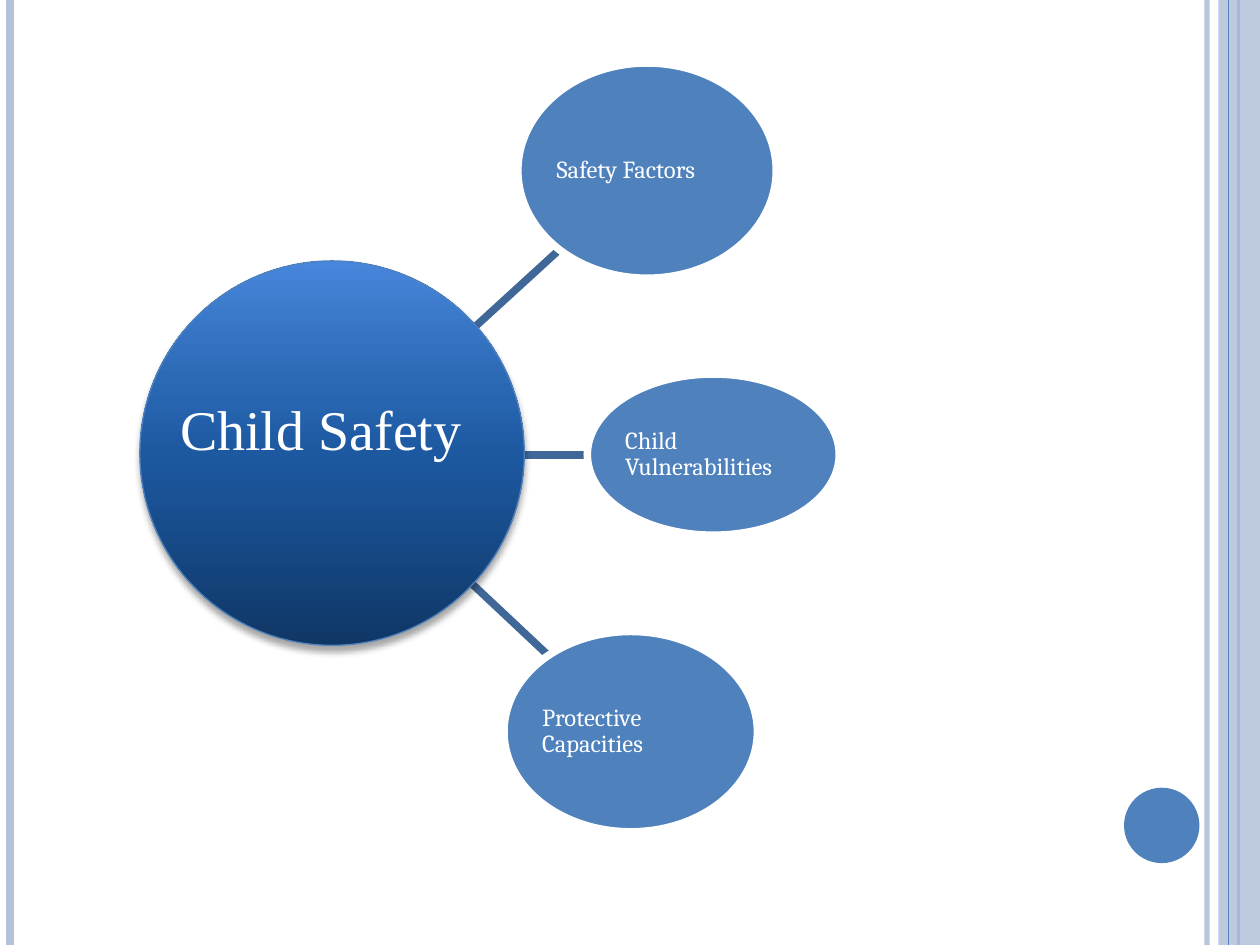
from lxml import etree
from pptx import Presentation
from pptx.dml.color import RGBColor
from pptx.enum.shapes import MSO_CONNECTOR, MSO_SHAPE
from pptx.enum.text import MSO_ANCHOR, PP_ALIGN
from pptx.oxml.ns import qn
from pptx.util import Cm, Pt

STRAIGHT = MSO_CONNECTOR.STRAIGHT
OVAL = MSO_SHAPE.OVAL
RECTANGLE = MSO_SHAPE.RECTANGLE
MIDDLE = MSO_ANCHOR.MIDDLE
LEFT = PP_ALIGN.LEFT

COLORS = {
    "blue": "4F81BD",
    "pale": "B3C1DB",
    "spoke": "3F6797",
    "white": "FFFFFF",
    "black": "000000",
}
HUB_STOPS = [(0, "0F3766"), (50, "1D59A1"), (70, "2D6AB6"), (100, "4786DB")]
WIDTH, HEIGHT = 25.4, 19.05

STRIPES_BELOW = [(24.33, "pale", 3, 93), (0.2, "pale", 4.5, 100), (24.97, "blue", 1.5, 100)]
BAND = (24.56, 0, 0.84, HEIGHT)
STRIPE_ABOVE = (24.77, "blue", 0.75, 100)
BADGE = (22.66, 15.88, 1.52, 1.52)

SPOKES = [
    (9.42, 11.68, 11.05, 13.21),
    (9.42, 9.17, 11.84, 9.17),
    (9.42, 6.73, 11.28, 5.03),
]
HUB = (2.82, 5.26, 7.75, 7.75)
HUB_LABEL = (3.38, 7.82, 6.25, 1.63)
FACTORS = [
    ("Safety Factors", (10.44, 1.27, 5.21, 4.34)),
    ("Child Vulnerabilities", (11.84, 7.54, 5.08, 3.25)),
    ("Protective Capacities", (10.16, 12.73, 5.11, 4.04)),
]


def rgb(name):
    return RGBColor.from_string(COLORS[name])


def set_alpha(parent, percent):
    for color in parent.iter(qn("a:srgbClr")):
        etree.SubElement(color, qn("a:alpha"), val=str(percent * 1000))


def add_line(page, ends, color, width, alpha=100):
    line = page.shapes.add_connector(STRAIGHT, *map(Cm, ends))
    line.line.color.rgb = rgb(color)
    line.line.width = Pt(width)
    properties = line._element.spPr
    if alpha < 100:
        set_alpha(properties, alpha)
    etree.SubElement(properties, qn("a:effectLst"))


def add_stripe(page, x, color, width, alpha):
    add_line(page, (x, 0, x, HEIGHT), color, width, alpha)


def add_figure(page, kind, area, fill="blue", alpha=100):
    figure = page.shapes.add_shape(kind, *map(Cm, area))
    figure.shadow.inherit = False
    figure.fill.solid()
    figure.fill.fore_color.rgb = rgb(fill)
    if alpha < 100:
        set_alpha(figure._element.spPr, alpha)
    figure.line.fill.background()
    return figure


def set_outline(figure, color, width):
    figure.line.color.rgb = rgb(color)
    figure.line.width = Pt(width)


def write_text(shape, text, font, size):
    shape.text_frame.text = text
    para = shape.text_frame.paragraphs[0]
    para.alignment = LEFT
    span = para.runs[0]
    span.font.name = font
    span.font.size = Pt(size)
    span.font.color.rgb = rgb("white")
    return para


def add_hub(page):
    hub = add_figure(page, OVAL, HUB)
    set_outline(hub, "blue", 0.75)
    hub.fill.gradient()
    hub.fill.gradient_angle = 90
    properties = hub._element.spPr
    stops = properties.find(".//" + qn("a:gsLst"))
    for stop in list(stops):
        stops.remove(stop)
    for position, color in HUB_STOPS:
        stop = etree.SubElement(stops, qn("a:gs"), pos=str(position * 1000))
        etree.SubElement(stop, qn("a:srgbClr"), val=color)
    shadow = etree.SubElement(
        properties.find(qn("a:effectLst")), qn("a:outerShdw"),
        blurRad=str(Pt(4)), dist=str(Pt(3)), dir="5400000", rotWithShape="0")
    etree.SubElement(shadow, qn("a:srgbClr"), val=COLORS["black"])
    set_alpha(shadow, 35)


def add_factor(page, text, area):
    factor = add_figure(page, OVAL, area)
    set_outline(factor, "white", 4.33)
    frame = factor.text_frame
    frame.word_wrap = True
    frame.vertical_anchor = MIDDLE
    frame.margin_left = frame.margin_right = Cm(0.02)
    frame.margin_top = frame.margin_bottom = Cm(0.02)
    write_text(factor, text, "Cambria", 14).line_spacing = 0.9


def add_hub_label(page):
    box = page.shapes.add_textbox(*map(Cm, HUB_LABEL))
    box.text_frame.word_wrap = False
    write_text(box, "Child Safety", "Times New Roman", 32)


def main():
    deck = Presentation()
    deck.slide_width, deck.slide_height = Cm(WIDTH), Cm(HEIGHT)
    page = deck.slides.add_slide(deck.slide_layouts[6])
    for stripe in STRIPES_BELOW:
        add_stripe(page, *stripe)
    add_figure(page, RECTANGLE, BAND, "pale", 87)
    add_stripe(page, *STRIPE_ABOVE)
    add_figure(page, OVAL, BADGE)
    for ends in SPOKES:
        add_line(page, ends, "spoke", 4.33)
    add_hub(page)
    for text, area in FACTORS:
        add_factor(page, text, area)
    add_hub_label(page)
    deck.save("out.pptx")


if __name__ == "__main__":
    main()
